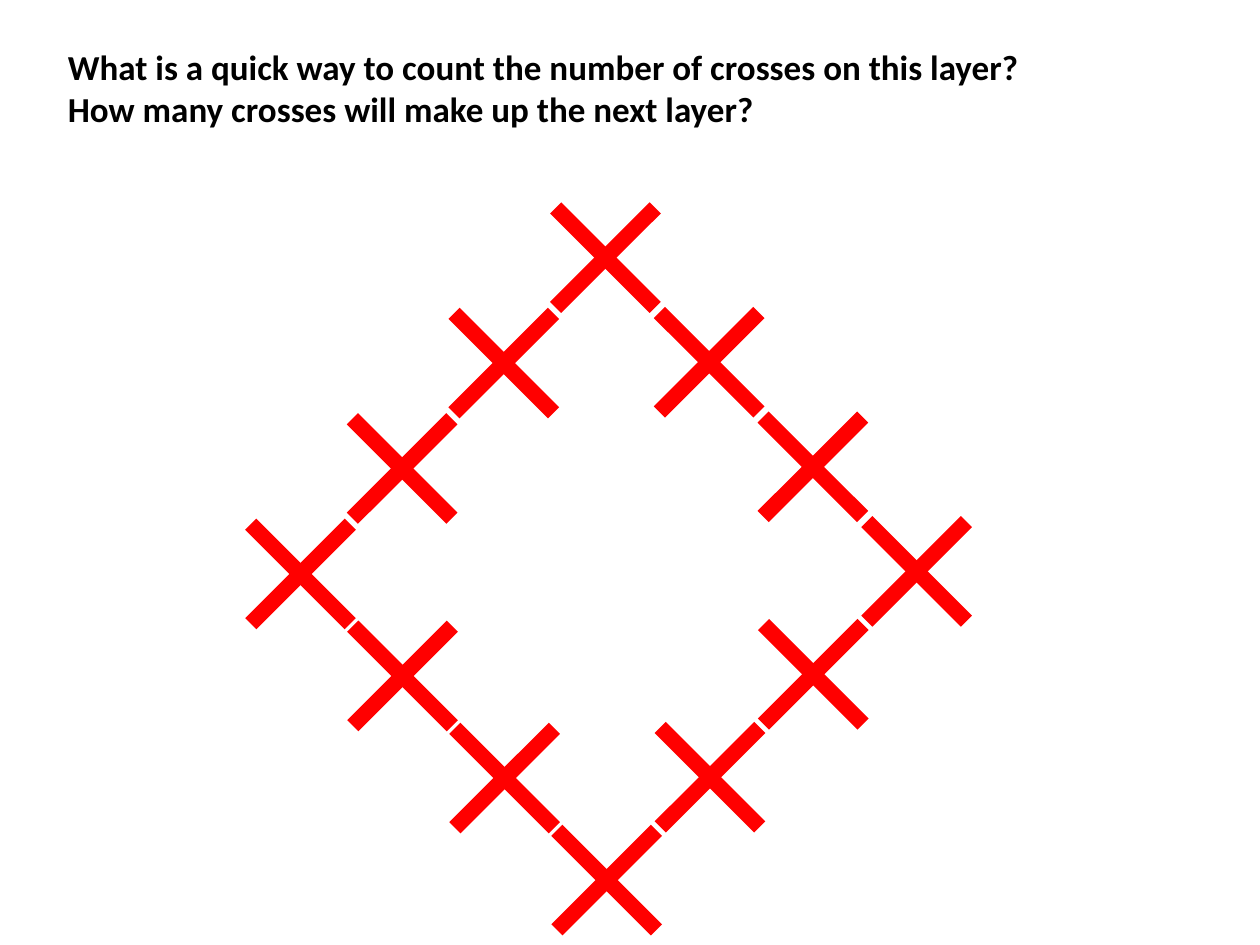
from pptx import Presentation
from pptx.dml.color import RGBColor
from pptx.enum.shapes import MSO_CONNECTOR
from pptx.enum.text import MSO_AUTO_SIZE
from pptx.oxml.ns import qn
from pptx.util import Inches, Pt
from lxml.etree import SubElement

RED = RGBColor(0xFF, 0x00, 0x00)
BLACK = RGBColor(0x00, 0x00, 0x00)
FONT = "Calibri"

CROSS = 0.79  # side of one cross
STEPS = 3     # crosses per side of the diamond, each corner counted once
# Top, right, bottom and left cross, relative to the diamond's box
CORNERS = [(2.42, 0), (4.89, 2.49), (2.43, 4.94), (0, 2.51)]
QUESTIONS = [
    "What is a quick way to count the number of crosses on this layer?",
    "How many crosses will make up the next layer?",
]


def add_text(slide, left, top, width, height):
    box = slide.shapes.add_textbox(
        Inches(left), Inches(top), Inches(width), Inches(height))
    frame = box.text_frame
    frame.word_wrap = True
    frame.auto_size = MSO_AUTO_SIZE.SHAPE_TO_FIT_TEXT
    frame.text = "\n".join(QUESTIONS)
    for para in frame.paragraphs:
        font = para.font
        font.name, font.size, font.bold = FONT, Pt(20), True
        font.color.rgb = BLACK


def add_cross(shapes, left, top):
    right, bottom = left + CROSS, top + CROSS
    # Falling stroke, then rising stroke
    for start, end in ((left, right), (right, left)):
        line = shapes.add_connector(
            MSO_CONNECTOR.STRAIGHT,
            Inches(start), Inches(top), Inches(end), Inches(bottom))
        line.line.color.rgb = RED
        line.line.width = Pt(9)
        SubElement(line._element.spPr, qn("a:effectLst"))


def add_diamond(slide, left, top):
    group = slide.shapes.add_group_shape()
    # Each side runs from its corner up to, but not including, the next
    for (x1, y1), (x2, y2) in zip(CORNERS, CORNERS[1:] + CORNERS[:1]):
        for step in range(STEPS):
            part = step / STEPS
            add_cross(group.shapes,
                      left + x1 + (x2 - x1) * part,
                      top + y1 + (y2 - y1) * part)


def main():
    deck = Presentation()
    deck.slide_width, deck.slide_height = Inches(10), Inches(7.5)
    slide = deck.slides.add_slide(deck.slide_layouts[6])
    add_diamond(slide, 1.99, 1.65)
    add_text(slide, 0.44, 0.31, 9.53, 0.77)
    deck.save("out.pptx")


if __name__ == "__main__":
    main()
